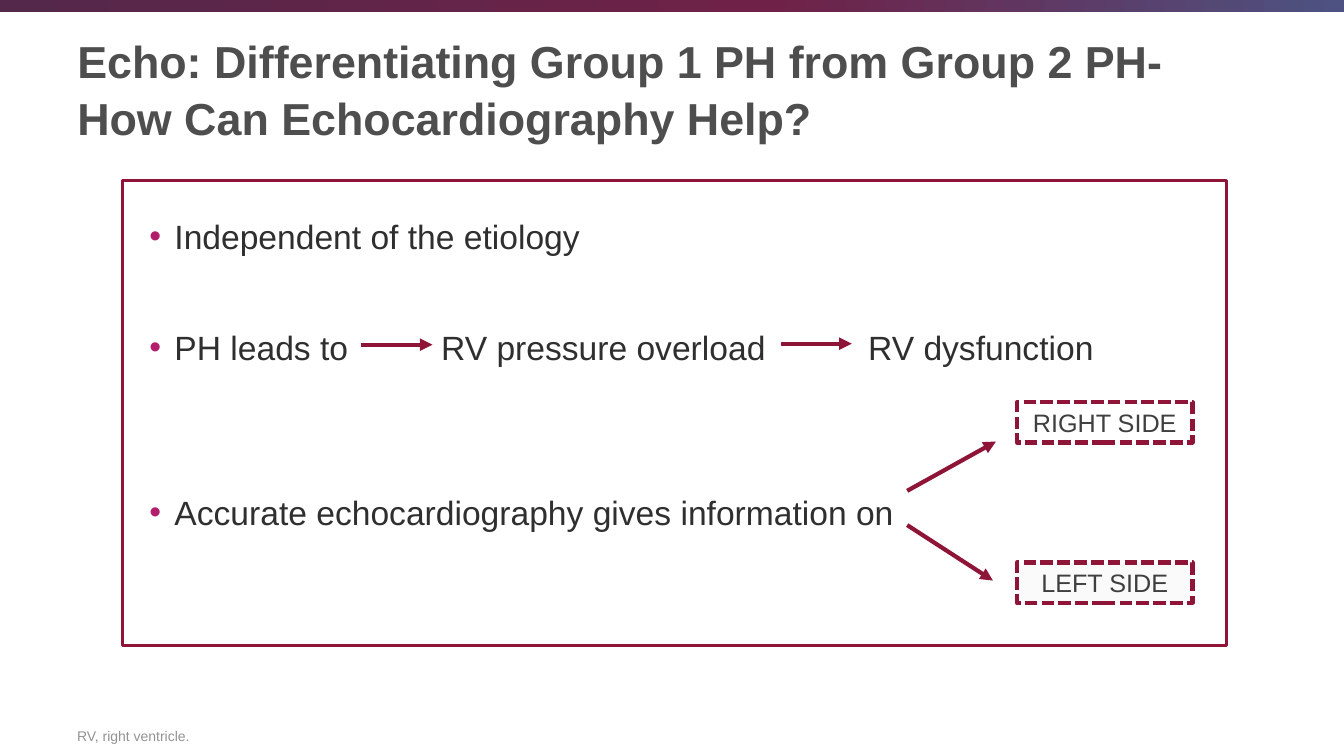
from copy import deepcopy
from typing import NamedTuple

from lxml import etree
from pptx import Presentation
from pptx.dml.color import RGBColor
from pptx.enum.dml import MSO_LINE
from pptx.enum.shapes import MSO_CONNECTOR, MSO_SHAPE
from pptx.enum.text import MSO_ANCHOR, MSO_AUTO_SIZE, PP_ALIGN
from pptx.oxml.ns import qn
from pptx.util import Pt

RECT = MSO_SHAPE.RECTANGLE
STRAIGHT = MSO_CONNECTOR.STRAIGHT
DASH = MSO_LINE.SQUARE_DOT
LEFT, CENTER = PP_ALIGN.LEFT, PP_ALIGN.CENTER
TOP, MIDDLE, BOTTOM = MSO_ANCHOR.TOP, MSO_ANCHOR.MIDDLE, MSO_ANCHOR.BOTTOM
NO_FIT = MSO_AUTO_SIZE.NONE

COLORS = {
    "title": "4D4E4D", "body": "2F2F2F", "label": "3F3F3F", "footnote": "939393",
    "bullet": "B21E6C", "crimson": "8E1537", "white": "FFFFFF", "offwhite": "FAFAFA",
    "band_start": "54284B", "band_middle": "6F2147", "band_end": "4D5282",
}
FORMATS = {
    "title": {"size": Pt(32), "bold": True},
    "body": {"size": Pt(24), "bold": False},
    "label": {"size": Pt(18), "bold": False},
    "footnote": {"size": Pt(10), "bold": False},
}
LINE_SPACING = 1.05


class Bullet(NamedTuple):
    text: str
    space_before: float


class Arrow(NamedTuple):
    x1: float
    y1: float
    x2: float
    y2: float


class SideBox(NamedTuple):
    text: str
    top: float
    fill: str


BULLETS = [
    Bullet("Independent of the etiology", 0),
    Bullet("PH leads to\tRV pressure overload\tRV dysfunction", 49),
    Bullet("Accurate echocardiography gives information on", 88),
]
TAB_STOPS = [208.5, 513.5]
ARROWS = [
    Arrow(257.8, 246.2, 308.9, 246.2),
    Arrow(558, 245.5, 608.4, 245.5),
    Arrow(648, 350.6, 711.4, 315.4),
    Arrow(648, 375.1, 709.2, 414.7),
]
SIDE_BOXES = [SideBox("RIGHT SIDE", 287.3, "white"), SideBox("LEFT SIDE", 401.8, "offwhite")]


def rgb(name: str) -> RGBColor:
    return RGBColor.from_string(COLORS[name])


def place(shape, left: float, top: float, width: float, height: float) -> None:
    shape.left, shape.top, shape.width, shape.height = map(Pt, (left, top, width, height))


def set_frame(tf, anchor) -> None:
    for name, value in {"word_wrap": True, "auto_size": NO_FIT, "vertical_anchor": anchor}.items():
        setattr(tf, name, value)


def write(p, text: str, style: str, align=LEFT) -> None:
    p.alignment = align
    r = p.add_run()
    r.text = text
    r.font.name = "Arial"
    r.font.color.rgb = rgb(style)
    for name, value in FORMATS[style].items():
        setattr(r.font, name, value)


def add_bullet(p, bullet: Bullet) -> None:
    pPr = p._p.get_or_add_pPr()
    pPr.set("marL", str(Pt(18)))
    pPr.set("indent", str(-Pt(18)))
    color = etree.SubElement(pPr, qn("a:buClr"))
    etree.SubElement(color, qn("a:srgbClr"), val=COLORS["bullet"])
    etree.SubElement(pPr, qn("a:buFont"), typeface="Arial")
    etree.SubElement(pPr, qn("a:buChar"), char="•")
    if "\t" in bullet.text:
        tabs = etree.SubElement(pPr, qn("a:tabLst"))
        for stop in TAB_STOPS:
            etree.SubElement(tabs, qn("a:tab"), pos=str(Pt(stop)), algn="l")
    p.line_spacing = LINE_SPACING
    p.space_before = Pt(bullet.space_before)
    write(p, bullet.text, "body")


def add_rect(s, left: float, top: float, width: float, height: float):
    shape = s.shapes.add_shape(RECT, Pt(left), Pt(top), Pt(width), Pt(height))
    shape.shadow.inherit = False
    return shape


def outline(shape, width: float) -> None:
    shape.line.color.rgb = rgb("crimson")
    shape.line.width = Pt(width)


def add_arrow(s, arrow: Arrow) -> None:
    line = s.shapes.add_connector(STRAIGHT, *map(Pt, arrow))
    outline(line, 3)
    etree.SubElement(line.line._get_or_add_ln(), qn("a:tailEnd"), type="triangle")
    etree.SubElement(line._element.spPr, qn("a:effectLst"))


def add_side_box(s, box: SideBox) -> None:
    shape = add_rect(s, 726.5, box.top, 125.3, 28.8)
    shape.fill.solid()
    shape.fill.fore_color.rgb = rgb(box.fill)
    outline(shape, 3)
    shape.line.dash_style = DASH
    set_frame(shape.text_frame, MIDDLE)
    write(shape.text_frame.paragraphs[0], box.text, "label", CENTER)


def add_band(s) -> None:
    band = add_rect(s, 0, 0, 960, 8.64)
    band.line.fill.background()
    band.fill.gradient()
    band.fill.gradient_angle = 0
    stop_list = band._element.spPr.find(qn("a:gradFill")).find(qn("a:gsLst"))
    stop_list.append(deepcopy(stop_list[0]))
    names = ("band_start", "band_middle", "band_end")
    for stop, position, name in zip(band.fill.gradient_stops, (0, 0.57, 1), names):
        stop.position = position
        stop.color.rgb = rgb(name)


def main() -> None:
    prs = Presentation()
    prs.slide_width, prs.slide_height = Pt(960), Pt(540)
    s = prs.slides.add_slide(prs.slide_layouts[1])
    add_band(s)

    # Title
    title = s.shapes.title
    place(title, 48, 16, 846, 93.6)
    set_frame(title.text_frame, MIDDLE)
    p = title.text_frame.paragraphs[0]
    p.line_spacing = LINE_SPACING
    write(p, "Echo: Differentiating Group 1 PH from Group 2 PH-How Can Echocardiography Help?", "title")

    # Bulleted list
    body = s.placeholders[1]
    place(body, 99.4, 149, 812.9, 371.5)
    tf = body.text_frame
    set_frame(tf, TOP)
    for i, bullet in enumerate(BULLETS):
        add_bullet(tf.add_paragraph() if i else tf.paragraphs[0], bullet)

    # Arrows and the two sides they lead to
    for arrow in ARROWS:
        add_arrow(s, arrow)
    for box in SIDE_BOXES:
        add_side_box(s, box)

    # Footnote
    note = s.shapes.add_textbox(Pt(48), Pt(500.4), Pt(846), Pt(34.6))
    set_frame(note.text_frame, BOTTOM)
    write(note.text_frame.paragraphs[0], "RV, right ventricle.", "footnote")

    # Frame around the content
    frame = add_rect(s, 87.8, 128.9, 788.4, 331.9)
    frame.fill.background()
    outline(frame, 2.25)

    prs.save("out.pptx")


if __name__ == "__main__":
    main()
